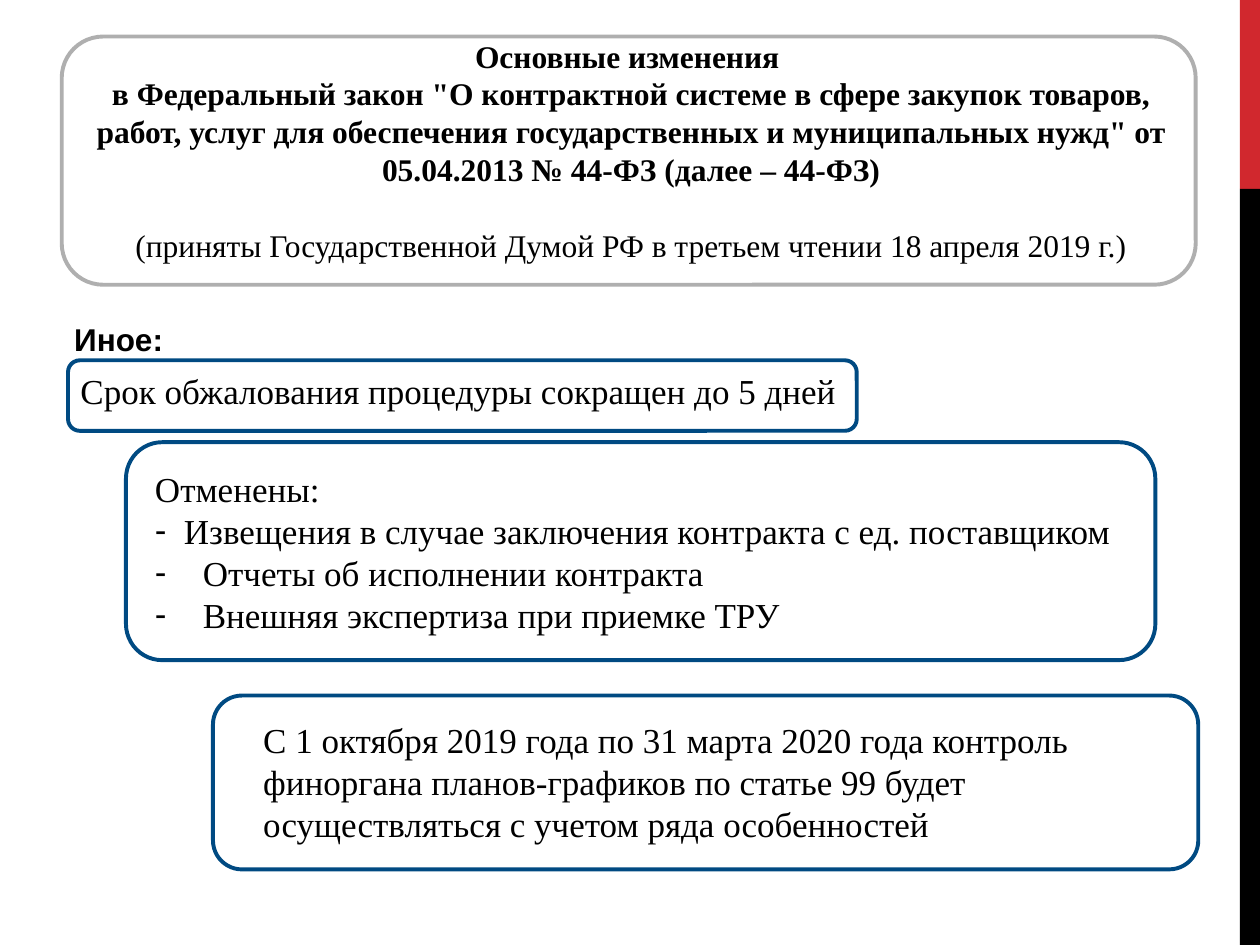
from dataclasses import dataclass
from typing import Optional

from lxml import etree
from pptx import Presentation
from pptx import util as u
from pptx.dml.color import RGBColor
from pptx.enum import shapes, text
from pptx.oxml import ns

BLACK = RGBColor(0x00, 0x00, 0x00)
RED = RGBColor(0xD1, 0x28, 0x2E)
GRAY = RGBColor(0xAF, 0xAF, 0xAF)
BLUE = RGBColor(0x00, 0x4A, 0x82)
SERIF = "Times New Roman"


@dataclass
class Area:
    left: float
    top: float
    width: float
    height: float

    def lengths(self) -> list:
        return [u.Inches(v) for v in (self.left, self.top, self.width, self.height)]


@dataclass
class Line:
    text: str
    size: int = 20
    font: str = SERIF
    bold: bool = False
    align: text.PP_ALIGN = text.PP_ALIGN.LEFT
    space_before: float = 0
    hanging: Optional[float] = None


def add_bar(page, area: Area, color: RGBColor) -> None:
    bar = page.shapes.add_shape(shapes.MSO_SHAPE.RECTANGLE, *area.lengths())
    bar.shadow.inherit = False
    bar.fill.solid()
    bar.fill.fore_color.rgb = color
    bar.line.fill.background()


def add_frame(page, area: Area, color: RGBColor) -> None:
    frame = page.shapes.add_shape(shapes.MSO_SHAPE.ROUNDED_RECTANGLE, *area.lengths())
    frame.shadow.inherit = False
    frame.fill.background()
    frame.line.color.rgb = color
    frame.line.width = u.Pt(2.25)


def set_bullet(para, hanging: Optional[float]) -> None:
    """Give the paragraph a hanging dash, or no bullet when hanging is None."""
    properties = para._p.get_or_add_pPr()
    indent = u.Inches(hanging or 0)
    properties.set("marL", str(indent))
    properties.set("indent", str(-indent))
    if hanging is None:
        etree.SubElement(properties, ns.qn("a:buNone"))
    else:
        etree.SubElement(properties, ns.qn("a:buFontTx"))
        etree.SubElement(properties, ns.qn("a:buChar")).set("char", "-")


def fill_text(box, area: Area, lines: list[Line], anchor=text.MSO_ANCHOR.TOP) -> None:
    box.left, box.top, box.width, box.height = area.lengths()
    frame = box.text_frame
    frame_format = {"word_wrap": True, "auto_size": text.MSO_AUTO_SIZE.NONE,
                    "vertical_anchor": anchor}
    for name, value in frame_format.items():
        setattr(frame, name, value)
    for index, line in enumerate(lines):
        para = frame.paragraphs[0] if index == 0 else frame.add_paragraph()
        para.alignment = line.align
        para.space_before = u.Pt(line.space_before)
        set_bullet(para, line.hanging)
        span = para.add_run()
        span.text = line.text
        font_format = {"name": line.font, "size": u.Pt(line.size), "bold": line.bold}
        for name, value in font_format.items():
            setattr(span.font, name, value)
        span.font.color.rgb = BLACK


def add_text(page, area: Area, line: Line) -> None:
    fill_text(page.shapes.add_textbox(*area.lengths()), area, [line])


def heading(words: str, bold: bool = True, space_before: float = 0) -> Line:
    return Line(words, 18, bold=bold, align=text.PP_ALIGN.CENTER,
                space_before=space_before)


BARS = [(Area(9.84, 0, 0.16, 1.5), RED), (Area(9.84, 1.5, 0.16, 6), BLACK)]
FRAMES = [
    (Area(0.49, 0.29, 9, 1.97), GRAY),
    (Area(0.54, 2.86, 6.26, 0.56), BLUE),
    (Area(1, 3.51, 8.17, 1.73), BLUE),
    (Area(1.69, 5.52, 7.82, 1.38), BLUE),
]
TITLE = [
    heading("Основные изменения "),
    heading('в Федеральный закон "О контрактной системе в сфере закупок товаров, '
            'работ, услуг для обеспечения государственных и муниципальных нужд" от '
            "05.04.2013 № 44-ФЗ (далее – 44-ФЗ)"),
    heading("(приняты Государственной Думой РФ в третьем чтении 18 апреля 2019 г.)",
            bold=False, space_before=21.6),
]
CANCELLED = [
    Line("Отменены:"),
    Line("Извещения в случае заключения контракта с ед. поставщиком", hanging=0.23),
    Line("Отчеты об исполнении контракта", hanging=0.38),
    Line("Внешняя экспертиза при приемке ТРУ", hanging=0.38),
]
NOTES = [
    (Area(0.54, 2.88, 6.26, 0.44), Line("Срок обжалования процедуры сокращен до 5 дней")),
    (Area(1.99, 5.65, 7.22, 1.11),
     Line("С 1 октября 2019 года по 31 марта 2020 года контроль финоргана "
          "планов-графиков по статье 99 будет осуществляться с учетом ряда особенностей")),
    (Area(0.49, 2.49, 7.79, 0.4), Line("Иное:", 18, "Arial", True)),
]


def main() -> None:
    deck = Presentation()
    deck.slide_width, deck.slide_height = u.Inches(10), u.Inches(7.5)
    page = deck.slides.add_slide(deck.slide_layouts[1])
    for area, color in BARS:
        add_bar(page, area, color)
    for area, color in FRAMES:
        add_frame(page, area, color)
    fill_text(page.shapes.title, Area(0.51, 0.44, 9, 1.5), TITLE, text.MSO_ANCHOR.MIDDLE)
    fill_text(page.placeholders[1], Area(1.13, 3.66, 7.89, 1.45), CANCELLED)
    for area, line in NOTES:
        add_text(page, area, line)
    deck.save("out.pptx")


if __name__ == "__main__":
    main()
